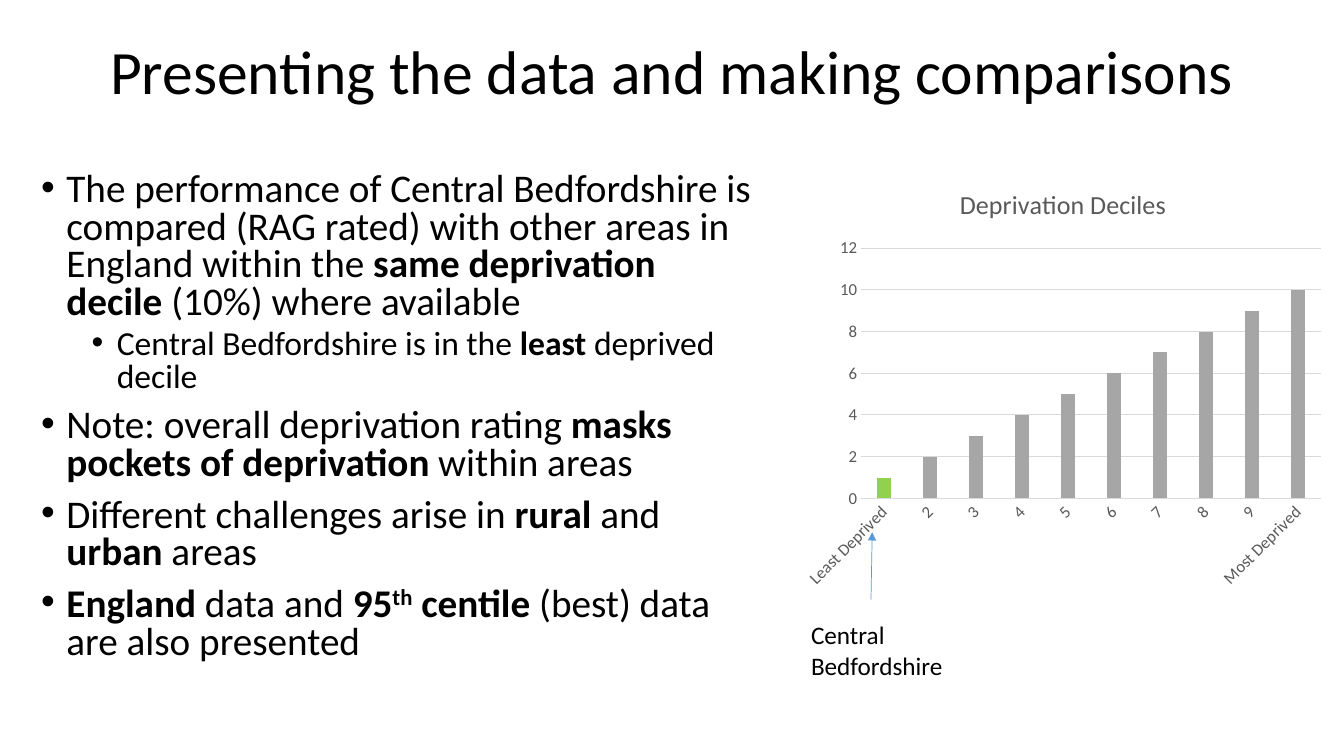
from lxml import etree
from pptx import Presentation
from pptx.chart.data import CategoryChartData
from pptx.dml.color import RGBColor
from pptx.enum.chart import XL_CHART_TYPE, XL_TICK_MARK
from pptx.enum.shapes import MSO_CONNECTOR
from pptx.enum.text import MSO_ANCHOR, PP_ALIGN
from pptx.oxml.ns import qn
from pptx.util import Cm, Pt

COLUMNS = XL_CHART_TYPE.COLUMN_CLUSTERED
NO_TICKS = XL_TICK_MARK.NONE
STRAIGHT = MSO_CONNECTOR.STRAIGHT
MIDDLE, TOP = MSO_ANCHOR.MIDDLE, MSO_ANCHOR.TOP
CENTER, LEFT = PP_ALIGN.CENTER, PP_ALIGN.LEFT

FONT = "Calibri"
BLACK, GRAY, PALE, BAR = "000000", "595959", "D9D9D9", "A6A6A6"
GREEN, BLUE = "92D050", "5B9BD5"

# Each point: level, then spans of (text, style)
POINTS = [
    (0, [("The performance of Central Bedfordshire is compared (RAG rated) "
          "with other areas in England within the ", ""),
         ("same deprivation decile ", "bold"), ("(10%) where available", "")]),
    (1, [("Central Bedfordshire is in the", ""), (" least ", "bold"),
         ("deprived decile", "")]),
    (0, [("Note: overall deprivation rating ", ""),
         ("masks pockets of deprivation", "bold"), (" within areas", "")]),
    (0, [("Different challenges arise in ", ""), ("rural", "bold"),
         (" and ", ""), ("urban", "bold"), (" areas", "")]),
    (0, [("England", "bold"), (" data and ", ""), ("95", "bold"),
         ("th", "bold superscript"), (" centile ", "bold"),
         ("(best) data are also presented", "")]),
]
LEVEL_SIZE = [28, 24]
LEVEL_SPACE = [10, 5]
LEVEL_INDENT = [0.25, 0.75]
HANGING = 0.25
CM_PER_INCH = 2.54


def color(value):
    return RGBColor.from_string(value)


def style_font(font, size, hex_color, bold=False):
    font.name, font.size, font.bold = FONT, Pt(size), bold
    font.color.rgb = color(hex_color)


def style_line(line, hex_color, width):
    line.color.rgb = color(hex_color)
    line.width = Pt(width)


def add_bullet(para, level):
    properties = para._p.get_or_add_pPr()
    properties.set("marL", str(Cm(LEVEL_INDENT[level] * CM_PER_INCH)))
    properties.set("indent", str(-Cm(HANGING * CM_PER_INCH)))
    etree.SubElement(properties, qn("a:buFont")).set("typeface", "Arial")
    etree.SubElement(properties, qn("a:buChar")).set("char", "•")


def add_text(page, box, paragraphs, size=18, align=LEFT, anchor=TOP,
             spacing=1.0, bullets=False):
    """Place paragraphs, each a level with its styled spans, in a text box."""
    frame = page.shapes.add_textbox(*map(Cm, box)).text_frame
    frame.word_wrap = True
    frame.vertical_anchor = anchor
    for index, (level, spans) in enumerate(paragraphs):
        para = frame.paragraphs[0] if index == 0 else frame.add_paragraph()
        para.alignment, para.line_spacing = align, spacing
        if bullets:
            para.level = level
            para.space_before = Pt(LEVEL_SPACE[level])
            add_bullet(para, level)
        for text, style in spans:
            span = para.add_run()
            span.text = text
            span_size = LEVEL_SIZE[level] if bullets else size
            style_font(span.font, span_size, BLACK, "bold" in style)
            if "superscript" in style:
                span._r.get_or_add_rPr().set("baseline", "30000")


def style_axes(chart):
    for axis in (chart.category_axis, chart.value_axis):
        axis.major_tick_mark = axis.minor_tick_mark = NO_TICKS
        style_font(axis.tick_labels.font, 12, GRAY)
    style_line(chart.category_axis.format.line, PALE, 0.75)
    label_body = chart.category_axis._element.find(qn("c:txPr")).find(qn("a:bodyPr"))
    label_body.set("rot", "-2700000")
    values = chart.value_axis
    values.minimum_scale, values.maximum_scale, values.major_unit = 0, 12, 2
    values.format.line.fill.background()
    style_line(values.major_gridlines.format.line, PALE, 0.75)


def add_decile_chart(page, box):
    data = CategoryChartData()
    data.categories = ["Least Deprived", *map(str, range(2, 10)), "Most Deprived"]
    data.add_series("Series 1", range(1, 11))
    chart = page.shapes.add_chart(COLUMNS, *map(Cm, box), data).chart
    style_font(chart.font, 10, BLACK)
    chart.has_legend = False
    chart.has_title = True
    title = chart.chart_title
    title.include_in_layout = False
    title.text_frame.text = "Deprivation Deciles"
    style_font(title.text_frame.paragraphs[0].runs[0].font, 18.6, GRAY)
    style_axes(chart)
    plot = chart.plots[0]
    plot.vary_by_categories = False
    plot.gap_width, plot.overlap = 219, -27
    series = plot.series[0]
    for bar, fill_color in ((series, BAR), (series.points[0], GREEN)):
        bar.format.fill.solid()
        bar.format.fill.fore_color.rgb = color(fill_color)


def add_arrow(page, start, end):
    arrow = page.shapes.add_connector(STRAIGHT, *map(Cm, (*start, *end)))
    style_line(arrow.line, BLUE, 0.5)
    etree.SubElement(arrow.line._get_or_add_ln(), qn("a:tailEnd")).set("type", "triangle")
    etree.SubElement(arrow._element.spPr, qn("a:effectLst"))


def add_chart_region(page, box):
    """Place the chart with the arrow and caption that mark the first bar."""
    left, top, width, height = box
    bottom = top + height
    add_decile_chart(page, box)
    add_text(page, (left + 0.17, bottom + 0.45, 3.99, 1.8),
             [(0, [("Central Bedfordshire", "")])])
    add_arrow(page, (left + 1.93, bottom + 0.07), (left + 1.96, bottom - 1.63))


def build_comparison_slide(page):
    add_text(page, (2.34, 0.03, 29.21, 3.68),
             [(0, [("Presenting the data and making comparisons", "")])],
             size=44, align=CENTER, anchor=MIDDLE, spacing=0.9)
    add_text(page, (0.79, 4.22, 18.44, 13.72), POINTS, spacing=0.8, bullets=True)
    add_chart_region(page, (20.02, 4.22, 13.54, 10.82))


def main():
    deck = Presentation()
    deck.slide_width, deck.slide_height = Cm(33.87), Cm(19.05)
    build_comparison_slide(deck.slides.add_slide(deck.slide_layouts[6]))
    deck.save("out.pptx")


if __name__ == "__main__":
    main()
